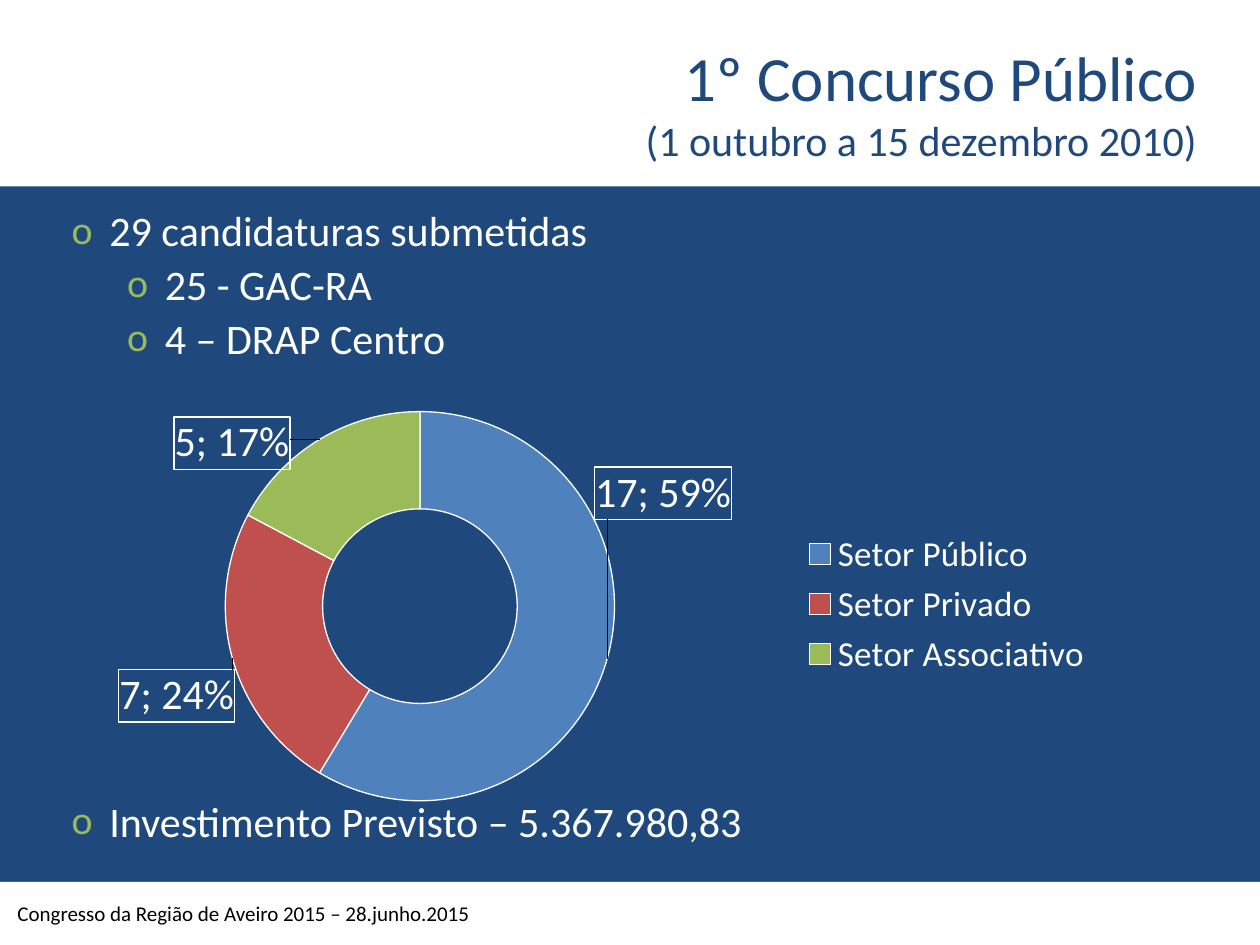
from lxml import etree
from pptx import Presentation
from pptx.chart.data import CategoryChartData
from pptx.dml.color import RGBColor
from pptx.enum.chart import XL_CHART_TYPE, XL_LEGEND_POSITION
from pptx.enum.shapes import MSO_SHAPE
from pptx.enum.text import MSO_ANCHOR, PP_ALIGN
from pptx.oxml import parse_xml
from pptx.oxml.ns import nsdecls, qn
from pptx.util import Inches, Pt

DOUGHNUT = XL_CHART_TYPE.DOUGHNUT
LEGEND_RIGHT = XL_LEGEND_POSITION.RIGHT
RECT = MSO_SHAPE.RECTANGLE
BOTTOM, MIDDLE = MSO_ANCHOR.BOTTOM, MSO_ANCHOR.MIDDLE
RIGHT = PP_ALIGN.RIGHT

FONT = "Calibri"
COLORS = {"navy": "1F497D", "white": "FFFFFF", "black": "000000",
          "blue": "4F81BD", "red": "C0504D", "green": "9BBB59"}

# Sector, applications, colour, label offset as a share of the chart size
SECTORS = [("Setor Público", 17, "blue", (0.1, -0.36)),
           ("Setor Privado", 7, "red", (-0.1, 0.12)),
           ("Setor Associativo", 5, "green", (-0.11, -0.09))]


def rgb(name):
    return RGBColor.from_string(COLORS[name])


def style_font(font, size, color):
    font.name = FONT
    font.size = Pt(size)
    font.color.rgb = rgb(color)


def add_run(p, text, size, color):
    r = p.add_run()
    r.text = text
    style_font(r.font, size, color)


def add_band(s, top, height):
    sp = s.shapes.add_shape(RECT, 0, Inches(top), Inches(10), Inches(height))
    sp.shadow.inherit = False
    sp.fill.solid()
    sp.fill.fore_color.rgb = rgb("white")
    sp.line.fill.background()


def add_title(s, heading, dates):
    sp = s.shapes.title
    sp.left, sp.top = Inches(0.51), Inches(0.06)
    sp.width, sp.height = Inches(8.99), Inches(1.25)
    tf = sp.text_frame
    tf.vertical_anchor = BOTTOM
    tf.margin_left = tf.margin_right = tf.margin_bottom = 0
    p = tf.paragraphs[0]
    p.alignment = RIGHT
    add_run(p, heading, 36, "navy")
    p.add_line_break()
    add_run(p, dates, 24, "navy")


def add_text_box(s, left, top, width, height):
    sp = s.shapes.add_textbox(Inches(left), Inches(top),
                              Inches(width), Inches(height))
    sp.text_frame.word_wrap = True
    return sp.text_frame


def set_bullet(p, indent):
    pPr = p._p.get_or_add_pPr()
    pPr.set("marL", str(Inches(indent)))
    pPr.set("indent", str(Inches(-0.3)))
    color = etree.SubElement(pPr, qn("a:buClr"))
    etree.SubElement(color, qn("a:srgbClr"), val=COLORS["green"])
    etree.SubElement(pPr, qn("a:buSzPct"), val="95000")
    etree.SubElement(pPr, qn("a:buFont"), typeface=FONT)
    etree.SubElement(pPr, qn("a:buChar"), char="o")


def add_bullets(s, top, height, items):
    tf = add_text_box(s, 0.47, top, 9.03, height)
    for i, (level, text) in enumerate(items):
        p = tf.add_paragraph() if i else tf.paragraphs[0]
        set_bullet(p, (0.3, 0.74)[level])
        p.level = level
        p.line_spacing = 0.9
        p.space_before = Pt(4.8 if i else 0)
        add_run(p, text, 24, "white")


def place_plot(chart, x, y, w, h):
    area = chart._chartSpace.chart.plotArea
    for old in area.findall(qn("c:layout")):
        area.remove(old)
    area.insert(0, parse_xml(
        f'<c:layout {nsdecls("c")}><c:manualLayout>'
        '<c:layoutTarget val="inner"/>'
        '<c:xMode val="edge"/><c:yMode val="edge"/>'
        f'<c:x val="{x}"/><c:y val="{y}"/><c:w val="{w}"/><c:h val="{h}"/>'
        '</c:manualLayout></c:layout>'))


def boxed_label(idx, x, y):
    return parse_xml(
        f'<c:dLbl {nsdecls("c", "a")}><c:idx val="{idx}"/>'
        f'<c:layout><c:manualLayout><c:x val="{x}"/><c:y val="{y}"/>'
        '</c:manualLayout></c:layout>'
        f'<c:spPr><a:noFill/><a:ln w="{Pt(0.75)}"><a:solidFill>'
        f'<a:srgbClr val="{COLORS["white"]}"/></a:solidFill></a:ln></c:spPr>'
        '<c:txPr><a:bodyPr/><a:p><a:pPr><a:defRPr sz="2400"><a:solidFill>'
        f'<a:srgbClr val="{COLORS["white"]}"/></a:solidFill>'
        f'<a:latin typeface="{FONT}"/></a:defRPr></a:pPr></a:p></c:txPr>'
        '<c:showLegendKey val="0"/><c:showVal val="1"/>'
        '<c:showCatName val="0"/><c:showSerName val="0"/>'
        '<c:showPercent val="1"/><c:showBubbleSize val="0"/>'
        '<c:separator>; </c:separator></c:dLbl>')


def add_sector_chart(s):
    data = CategoryChartData()
    data.categories = [name for name, *_ in SECTORS]
    data.add_series("Series 1", [value for _, value, *_ in SECTORS])
    chart = s.shapes.add_chart(DOUGHNUT, Inches(0.65), Inches(3.12),
                               Inches(8.13), Inches(3.35), data).chart
    chart.has_title = False
    style_font(chart.font, 18, "white")
    chart.has_legend = True
    chart.legend.position = LEGEND_RIGHT
    chart.legend.include_in_layout = False
    style_font(chart.legend.font, 20, "white")
    place_plot(chart, 0.14, 0.04, 0.38, 0.93)

    plot = chart.plots[0]
    plot.vary_by_categories = True
    series = plot.series[0]
    labels = series.data_labels
    labels.show_value = labels.show_percentage = True
    style_font(labels.font, 24, "white")
    for i, (_, _, color, offset) in enumerate(SECTORS):
        fmt = series.points[i].format
        fmt.fill.solid()
        fmt.fill.fore_color.rgb = rgb(color)
        fmt.line.color.rgb = rgb("white")
        fmt.line.width = Pt(0.75)
        labels._element.insert(i, boxed_label(i, *offset))


def add_footer(s, text):
    tf = add_text_box(s, 0.04, 7.05, 4.37, 0.4)
    tf.vertical_anchor = MIDDLE
    add_run(tf.paragraphs[0], text, 12, "black")


def main():
    prs = Presentation()
    prs.slide_width, prs.slide_height = Inches(10), Inches(7.5)
    s = prs.slides.add_slide(prs.slide_layouts[5])
    s.background.fill.solid()
    s.background.fill.fore_color.rgb = rgb("navy")

    # Footer and header bands
    add_band(s, 7, 0.5)
    add_band(s, 0, 1.48)

    # Content
    add_title(s, "1º Concurso Público", "(1 outubro a 15 dezembro 2010)")
    add_bullets(s, 1.62, 1.4, [(0, "29 candidaturas submetidas"),
                               (1, "25 - GAC-RA"),
                               (1, "4 – DRAP Centro")])
    add_sector_chart(s)
    add_bullets(s, 6.31, 0.5, [(0, "Investimento Previsto – 5.367.980,83")])
    add_footer(s, "Congresso da Região de Aveiro 2015 – 28.junho.2015")
    # The bands lie behind the title
    s.shapes._spTree.append(s.shapes.title._element)
    prs.save("out.pptx")


if __name__ == "__main__":
    main()
